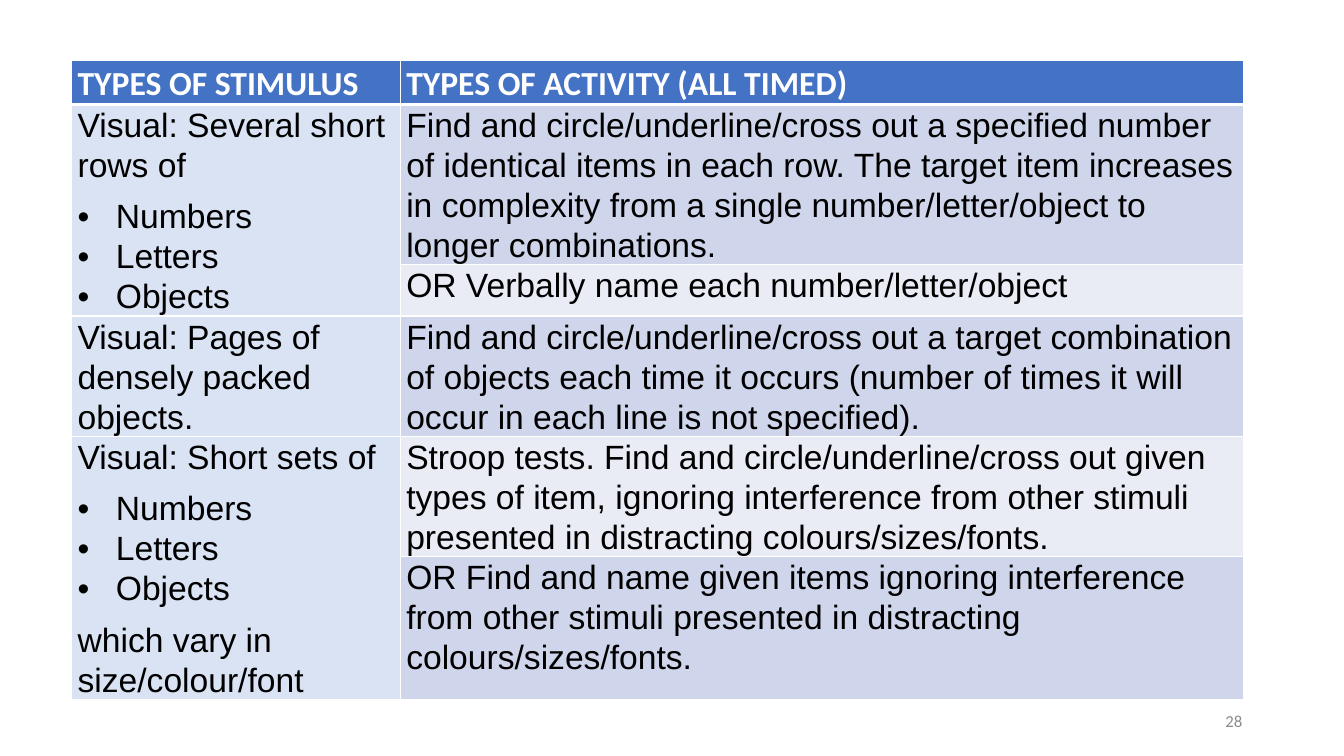
from lxml import etree
from pptx import Presentation
from pptx import util as u
from pptx.dml.color import RGBColor
from pptx.enum import text
from pptx.oxml.ns import qn

WHITE, BLACK, GREY = "FFFFFF", "000000", "8C8C8C"
HEADER, STIMULUS, DARK_BAND, LIGHT_BAND = "4472C4", "DAE3F3", "CFD5EA", "E9EBF5"
COLUMN_WIDTHS = [3.26, 8.36]
ROW_HEIGHTS = [0.43, 1.58, 0.5, 1.19, 1.19, 1.4]
HEADINGS = ["TYPES OF STIMULUS", "TYPES OF ACTIVITY (ALL TIMED)"]
BULLETS = ["Numbers", "Letters", "Objects"]

# Stimulus paragraphs, with the first and last table row each one covers
STIMULI = [
    (1, 2, ["Visual: Several short rows of", *BULLETS]),
    (3, 3, ["Visual: Pages of densely packed objects."]),
    (4, 5, ["Visual: Short sets of", *BULLETS, "which vary in size/colour/font"]),
]
ACTIVITIES = [
    "Find and circle/underline/cross out a specified number of identical items "
    "in each row. The target item increases in complexity from a single "
    "number/letter/object to longer combinations.",
    "OR Verbally name each number/letter/object",
    "Find and circle/underline/cross out a target combination of objects each time "
    "it occurs (number of times it will occur in each line is not specified).",
    "Stroop tests. Find and circle/underline/cross out given types of item, ignoring "
    "interference from other stimuli presented in distracting colours/sizes/fonts.",
    "OR Find and name given items ignoring interference from other stimuli "
    "presented in distracting colours/sizes/fonts.",
]


def colour(value):
    return RGBColor.from_string(value)


def write(para, words, size=24, font="Arial", ink=BLACK, bold=False,
          align=text.PP_ALIGN.LEFT, line=1.07, after=8, bullet=False):
    para.alignment = align
    para.line_spacing = line
    para.space_after = u.Pt(after)
    if bullet:
        props = para._p.get_or_add_pPr()
        indent = u.Inches(0.38)
        props.set("marL", str(indent))
        props.set("indent", str(-indent))
        etree.SubElement(props, qn("a:buFont"), typeface="Arial")
        etree.SubElement(props, qn("a:buChar"), char="•")
    span = para.add_run()
    span.text = words
    span.font.size = u.Pt(size)
    span.font.name = font
    span.font.bold = bold
    span.font.color.rgb = colour(ink)


def add_borders(cell, top=1, bottom=1):
    props = cell._tc.get_or_add_tcPr()
    for side, width in (("L", 1), ("R", 1), ("T", top), ("B", bottom)):
        border = etree.SubElement(props, qn(f"a:ln{side}"), w=str(u.Pt(width)))
        fill = etree.SubElement(border, qn("a:solidFill"))
        etree.SubElement(fill, qn("a:srgbClr"), val=WHITE)


def fill_cell(cell, lines, fill, **style):
    cell.margin_left = cell.margin_right = u.Inches(0.06)
    cell.margin_top = cell.margin_bottom = 0
    cell.fill.solid()
    cell.fill.fore_color.rgb = colour(fill)
    frame = cell.text_frame
    for i, words in enumerate(lines):
        para = frame.add_paragraph() if i else frame.paragraphs[0]
        bullet = words in BULLETS
        gap = 0 if bullet and words != BULLETS[-1] else 8
        write(para, words, bullet=bullet, after=gap, **style)


def add_activity_table(page):
    table = page.shapes.add_table(
        len(ROW_HEIGHTS), len(COLUMN_WIDTHS), u.Inches(0.71), u.Inches(0.6),
        u.Inches(sum(COLUMN_WIDTHS)), u.Inches(sum(ROW_HEIGHTS))).table
    for column, width in zip(table.columns, COLUMN_WIDTHS):
        column.width = u.Inches(width)
    for i, (row, height) in enumerate(zip(table.rows, ROW_HEIGHTS)):
        row.height = u.Inches(height)
        for cell in row.cells:
            add_borders(cell, top=3 if i == 1 else 1, bottom=3 if i == 0 else 1)

    # Header row
    for i, heading in enumerate(HEADINGS):
        fill_cell(table.cell(0, i), [heading], HEADER,
                  font="Calibri", ink=WHITE, bold=True)
    # Stimulus column
    for first, last, lines in STIMULI:
        cell = table.cell(first, 0)
        if last > first:
            cell.merge(table.cell(last, 0))
        fill_cell(cell, lines, STIMULUS)
    # Activity column in alternating bands
    for i, activity in enumerate(ACTIVITIES):
        fill_cell(table.cell(i + 1, 1), [activity],
                  LIGHT_BAND if i % 2 else DARK_BAND)


def add_page_number(page, number):
    box = page.shapes.add_textbox(
        u.Inches(9.42), u.Inches(6.95), u.Inches(3), u.Inches(0.4))
    frame = box.text_frame
    frame.word_wrap = True
    frame.vertical_anchor = text.MSO_ANCHOR.MIDDLE
    write(frame.paragraphs[0], number, size=12, font="Calibri", ink=GREY,
          align=text.PP_ALIGN.RIGHT, line=1.0, after=0)


def main():
    deck = Presentation()
    deck.slide_width, deck.slide_height = u.Inches(13.33), u.Inches(7.5)
    page = deck.slides.add_slide(deck.slide_layouts[6])
    add_activity_table(page)
    add_page_number(page, "28")
    deck.save("out.pptx")


if __name__ == "__main__":
    main()
